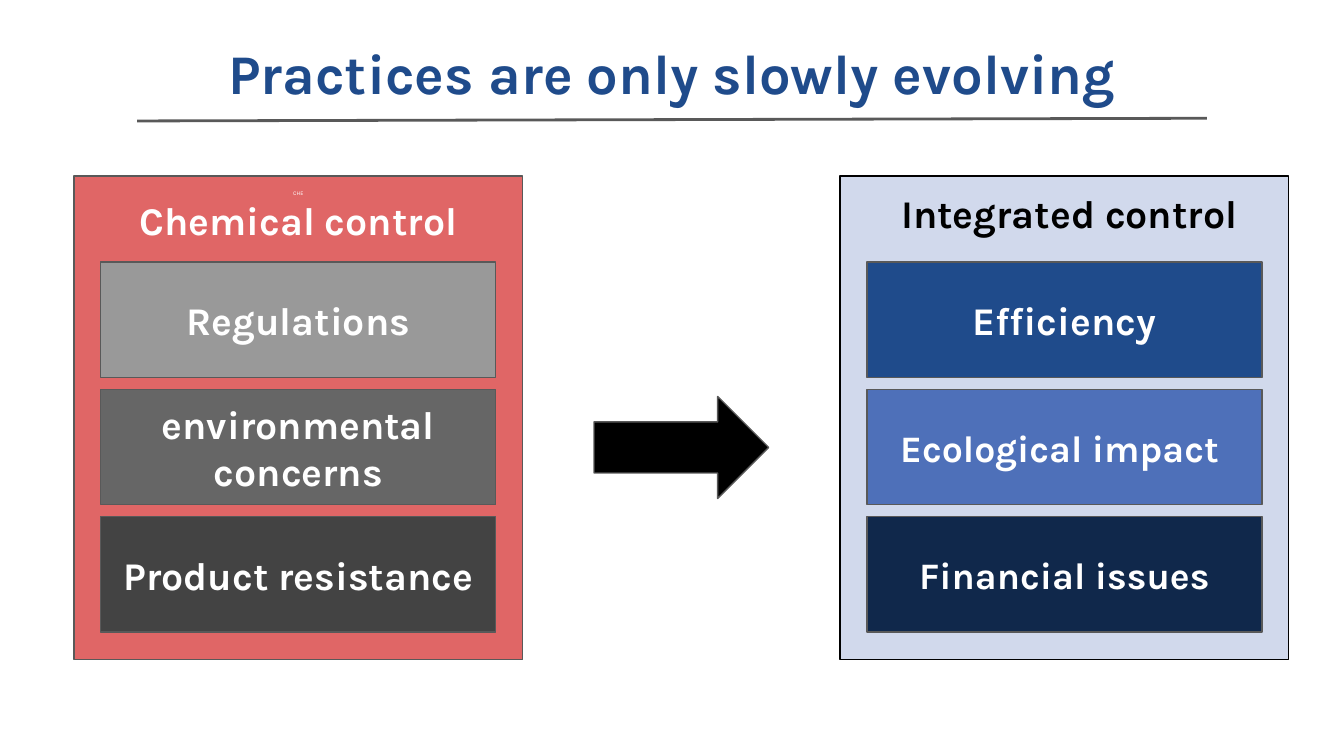
from lxml.etree import SubElement
from pptx import Presentation
from pptx.dml.color import RGBColor
from pptx.enum.shapes import MSO_CONNECTOR, MSO_SHAPE
from pptx.enum.text import MSO_ANCHOR as Anchor, MSO_AUTO_SIZE, PP_ALIGN as Align
from pptx.oxml.ns import qn
from pptx.util import Inches, Pt

WIDTH = 10
HEIGHT = WIDTH * 9 / 16
FONT = "Karla"
COLORS = {
    "white": "FFFFFF", "black": "000000", "outline": "595959", "red": "E06666",
    "light gray": "999999", "gray": "666666", "dark gray": "434343",
    "blue": "1F4B8B", "mid blue": "4E70B9", "navy": "10284B",
}


def color(name):
    return RGBColor.from_string(COLORS[name])


def write(shape, *lines, ink="white", anchor=Anchor.MIDDLE):
    """Fill a shape with centred lines, each a (text, size, bold) tuple."""
    frame = shape.text_frame
    frame.word_wrap = True
    frame.auto_size = MSO_AUTO_SIZE.NONE
    frame.vertical_anchor = anchor
    frame.margin_left = frame.margin_right = Inches(0.1)
    frame.margin_top = frame.margin_bottom = Inches(0.1)
    for index, (text, size, bold) in enumerate(lines):
        para = frame.paragraphs[0] if index == 0 else frame.add_paragraph()
        para.alignment = Align.CENTER
        span = para.add_run()
        span.text = text
        span.font.name = FONT
        span.font.size = Pt(size)
        span.font.bold = bold
        span.font.color.rgb = color(ink)


def add_block(page, box, fill, outline="outline", kind=MSO_SHAPE.RECTANGLE, opacity=None):
    shape = page.shapes.add_shape(kind, *map(Inches, box))
    shape.shadow.inherit = False
    shape.fill.solid()
    shape.fill.fore_color.rgb = color(fill)
    shape.line.color.rgb = color(outline)
    shape.line.width = Pt(0.75)
    if opacity is not None:
        tint = shape._element.spPr.find(qn("a:solidFill"))[0]
        SubElement(tint, qn("a:alpha"), val=str(opacity * 1000))
    return shape


def add_heading(page, box, text):
    """Title with a slightly rising rule below it."""
    left, top, width, height = box
    title = page.shapes.title
    title.left, title.top, title.width, title.height = map(Inches, box)
    write(title, (text, 30, True), ink="blue", anchor=Anchor.BOTTOM)

    overhang = 0.39
    ends = (left - overhang, top + height + 0.01,
            left + width + overhang, top + height - 0.01)
    rule = page.shapes.add_connector(MSO_CONNECTOR.STRAIGHT, *map(Inches, ends))
    rule.line.color.rgb = color("outline")
    rule.line.width = Pt(1.5)
    SubElement(rule._element.spPr, qn("a:effectLst"))


def add_panel(page, box, heading, tiles, ink="white", **style):
    """Headed panel holding an evenly spaced stack of tiles."""
    left, top, width, height = box
    write(add_block(page, box, **style), *heading, ink=ink, anchor=Anchor.TOP)

    # The panel is 36 grid rows high
    grid_row = height / 36
    inset = 0.06 * width
    for index, (text, size, fill) in enumerate(tiles):
        tile_box = (left + inset, top + (6.4 + 9.47 * index) * grid_row,
                    width - 2 * inset, 8.6 * grid_row)
        write(add_block(page, tile_box, fill), (text, size, True))


def main():
    deck = Presentation()
    deck.slide_width, deck.slide_height = Inches(WIDTH), Inches(HEIGHT)
    page = deck.slides.add_slide(deck.slide_layouts[5])

    add_heading(page, (1.41, 0.23, 7.18, 0.66), "Practices are only slowly evolving")

    # Two equal panels on one row
    top, width, height = 1.31, 3.34, 3.6
    add_panel(
        page, (0.55, top, width, height),
        [("CHE", 3, False), ("Chemical control", 21, True)],
        [("Regulations", 21, "light gray"),
         ("environmental concerns", 21, "gray"),
         ("Product resistance", 21, "dark gray")],
        fill="red")
    add_panel(
        page, (6.25, top, width, height),
        [(" Integrated control", 21, True)],
        [("Efficiency", 21, "blue"),
         ("Ecological impact ", 20, "mid blue"),
         ("Financial issues", 20, "navy")],
        ink="black", fill="mid blue", outline="black", opacity=26)

    # Arrow from the old practice to the new one
    add_block(page, (4.42, 2.95, 1.3, 0.76), "black", kind=MSO_SHAPE.RIGHT_ARROW)

    deck.save("out.pptx")


if __name__ == "__main__":
    main()
